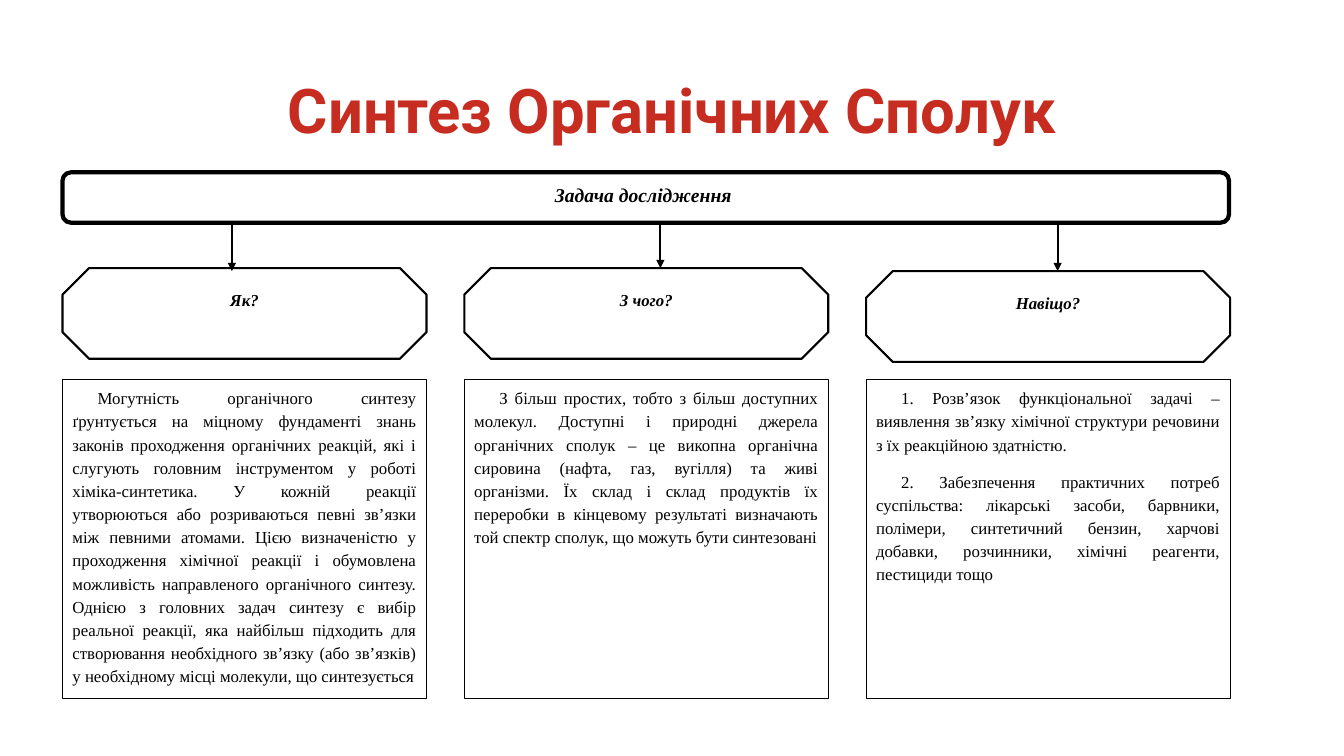
import pptx
import pptx.util
import pptx.dml.color
import pptx.enum.shapes
import pptx.enum.text
import pptx.oxml.ns
import lxml.etree

Inches = pptx.util.Inches
Pt = pptx.util.Pt
MSO_SHAPE = pptx.enum.shapes.MSO_SHAPE
PP_ALIGN = pptx.enum.text.PP_ALIGN
MSO_ANCHOR = pptx.enum.text.MSO_ANCHOR


def color(value):
    return pptx.dml.color.RGBColor.from_string(value)


def add_box(kind, left, top, width, height, line_width, texts, alignment, indent, font_format):
    shape = slide.shapes.add_shape(kind, Inches(left), Inches(top), Inches(width), Inches(height))
    shape.shadow.inherit = False
    shape.fill.solid()
    shape.fill.fore_color.rgb = color("FFFFFF")
    shape.line.color.rgb = color("000000")
    shape.line.width = Pt(line_width)
    frame = shape.text_frame
    frame.word_wrap = True
    frame.vertical_anchor = MSO_ANCHOR.TOP
    for index, text in enumerate(texts):
        paragraph = frame.add_paragraph() if index else frame.paragraphs[0]
        paragraph.alignment = alignment
        paragraph.line_spacing = 1.15
        paragraph.space_after = Pt(10)
        properties = paragraph._p.get_or_add_pPr()
        properties.set("marL", "0")
        properties.set("indent", str(Inches(indent)))
        run = paragraph.add_run()
        run.text = text
        run.font.color.rgb = color("000000")
        for name, value in font_format.items():
            setattr(run.font, name, value)
    return shape


presentation = pptx.Presentation()
presentation.slide_width = Inches(13.33)
presentation.slide_height = Inches(7.5)
slide = presentation.slides.add_slide(presentation.slide_layouts[5])

title = slide.shapes.title
title_place = {"left": 0.92, "top": 0.4, "width": 11.5, "height": 1.45}
for name, value in title_place.items():
    setattr(title, name, Inches(value))
title.text_frame.text = "Синтез Органічних Сполук"
title.text_frame.auto_size = pptx.enum.text.MSO_AUTO_SIZE.NONE
title.text_frame.vertical_anchor = MSO_ANCHOR.MIDDLE
paragraph = title.text_frame.paragraphs[0]
paragraph.alignment = PP_ALIGN.CENTER
paragraph.line_spacing = 0.9
title_font = paragraph.runs[0].font
title_font.color.rgb = color("C72C21")
for name, value in {"name": "Roboto", "size": Pt(44), "bold": True}.items():
    setattr(title_font, name, value)

body_format = {"name": "Times New Roman", "size": Pt(12)}
question_format = {**body_format, "bold": True, "italic": True}
task_format = {**question_format, "size": Pt(14)}

task = add_box(MSO_SHAPE.ROUNDED_RECTANGLE, 0.62, 1.71, 11.57, 0.5, 3,
               ["Задача дослідження "], PP_ALIGN.CENTER, 0, task_format)
task.adjustments[0] = 0.167

columns = [
    ("Як?", 2.66, 2.3, 2.69, [
        "Могутність органічного синтезу ґрунтується на міцному фундаменті знань законів "
        "проходження органічних реакцій, які і слугують головним інструментом у роботі "
        "хіміка-синтетика. У кожній реакції утворюються або розриваються певні зв’язки між "
        "певними атомами. Цією визначеністю у проходження хімічної реакції і обумовлена "
        "можливість направленого органічного синтезу. Однією з головних задач синтезу є вибір "
        "реальної реакції, яка найбільш підходить для створювання необхідного зв’язку "
        "(або зв’язків) у необхідному місці молекули, що синтезується"]),
    ("З чого?", 2.66, 6.55, 2.66, [
        "З більш простих, тобто з більш доступних молекул. Доступні і природні джерела "
        "органічних сполук – це викопна органічна сировина (нафта, газ, вугілля) та живі "
        "організми. Їх склад і склад продуктів їх переробки в кінцевому результаті визначають "
        "той спектр сполук, що можуть бути синтезовані"]),
    ("Навіщо?", 2.69, 10.49, 2.69, [
        "1. Розв’язок функціональної задачі – виявлення зв’язку хімічної структури речовини "
        "з їх реакційною здатністю.",
        "2. Забезпечення практичних потреб суспільства: лікарські засоби, барвники, полімери, "
        "синтетичний бензин, харчові добавки, розчинники, хімічні реагенти, пестициди тощо"]),
]

for index, (question, question_top, arrow_x, arrow_end, answers) in enumerate(columns):
    left = 0.62 + index * 3.985
    octagon = add_box(MSO_SHAPE.OCTAGON, left, question_top, 3.61, 0.9, 1.5,
                      [question], PP_ALIGN.CENTER, 0, question_format)
    octagon.adjustments[0] = 0.293
    add_box(MSO_SHAPE.RECTANGLE, left, 3.77, 3.61, 3.16, 0.75,
            answers, PP_ALIGN.JUSTIFY, 0.25, body_format)

    arrow = slide.shapes.add_connector(
        pptx.enum.shapes.MSO_CONNECTOR.STRAIGHT,
        Inches(arrow_x), Inches(2.23), Inches(arrow_x), Inches(arrow_end))
    arrow.line.color.rgb = color("000000")
    arrow.line.width = Pt(1.5)
    line_element = arrow.line._get_or_add_ln()
    lxml.etree.SubElement(line_element, pptx.oxml.ns.qn("a:tailEnd"), type="triangle")
    lxml.etree.SubElement(arrow._element.spPr, pptx.oxml.ns.qn("a:effectLst"))

presentation.save("out.pptx")
